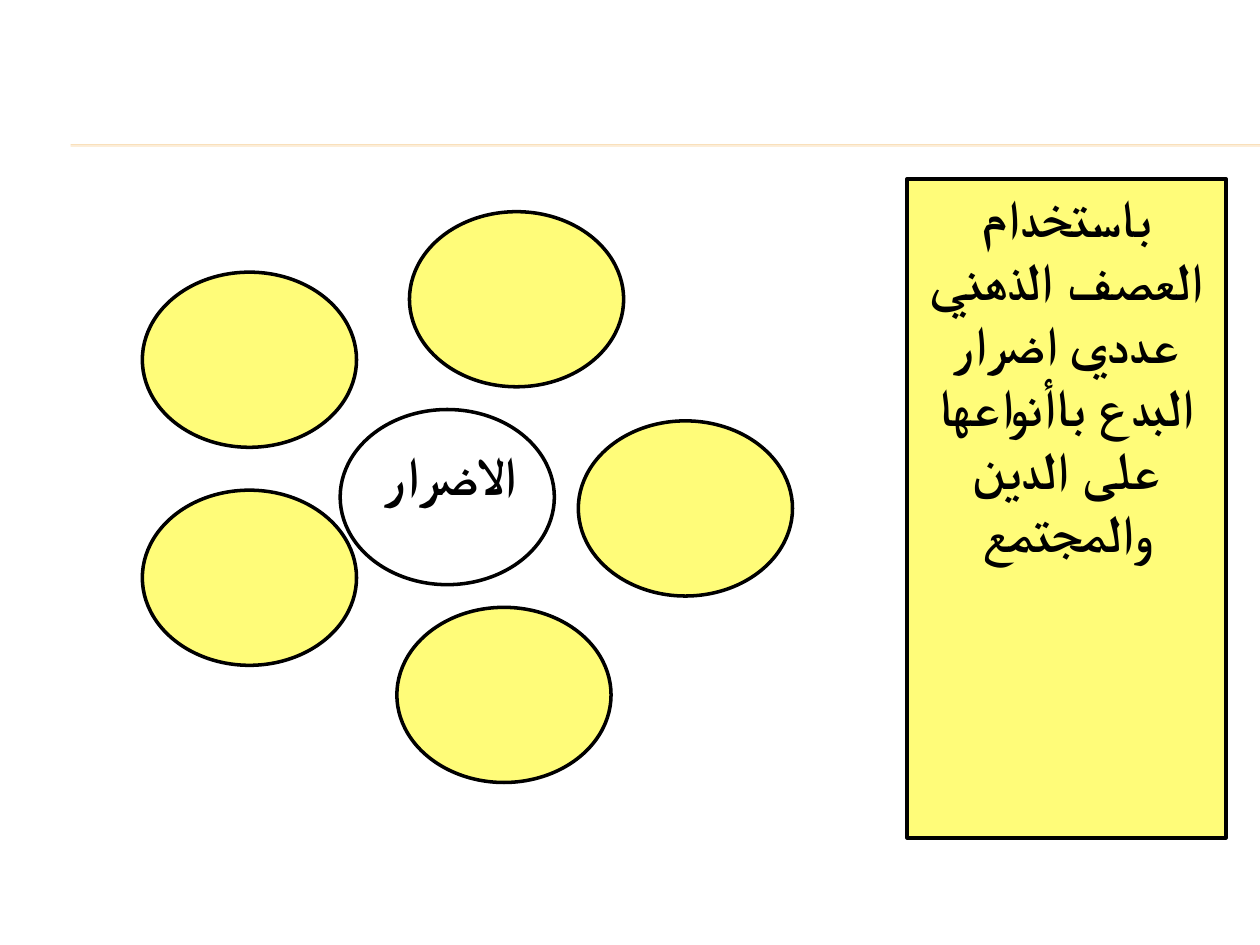
from lxml import etree
from pptx import Presentation
from pptx.dml.color import RGBColor
from pptx.enum.shapes import MSO_CONNECTOR, MSO_SHAPE
from pptx.enum.text import MSO_ANCHOR, PP_ALIGN
from pptx.oxml.ns import qn
from pptx.util import Inches, Pt

COLORS = {"yellow": "FFFC79", "white": "FFFFFF", "black": "000000", "rule": "F0A22E"}
FONT = "Roboto"
OVAL_W, OVAL_H = 1.7, 1.39
PETALS = [(3.25, 1.68), (3.15, 4.82), (1.13, 3.89), (1.13, 2.16), (4.59, 3.34)]


def rgb(name):
    """Return the named palette colour."""
    return RGBColor.from_string(COLORS[name])


def add_rule(s, left, top, right, bottom):
    """Draw one thin half-transparent header line."""
    line = s.shapes.add_connector(
        MSO_CONNECTOR.STRAIGHT, Inches(left), Inches(top), Inches(right), Inches(bottom))
    line.line.width = Pt(0.25)
    line.line.color.rgb = rgb("rule")
    color = line.line._ln.find(".//" + qn("a:srgbClr"))
    etree.SubElement(color, qn("a:alpha"), val="50000")
    etree.SubElement(line._element.spPr, qn("a:effectLst"))


def add_outlined(s, kind, box, fill):
    """Add a filled shape with a black outline."""
    sp = s.shapes.add_shape(kind, *map(Inches, box))
    sp.shadow.inherit = False
    sp.fill.solid()
    sp.fill.fore_color.rgb = rgb(fill)
    sp.line.color.rgb = rgb("black")
    sp.line.width = Pt(2)
    return sp


def write_arabic(sp, text, size, align):
    """Write bold right-to-left text at the top of a shape."""
    tf = sp.text_frame
    frame = {"word_wrap": True, "vertical_anchor": MSO_ANCHOR.TOP}
    frame.update({f"margin_{side}": Inches(0.05) for side in ("left", "top", "right", "bottom")})
    for name, value in frame.items():
        setattr(tf, name, value)
    p = tf.paragraphs[0]
    p.alignment = align
    p._p.get_or_add_pPr().set("rtl", "1")
    r = p.add_run()
    r.text = text
    for name, value in {"name": FONT, "size": Pt(size), "bold": True}.items():
        setattr(r.font, name, value)
    r.font.color.rgb = rgb("black")
    etree.SubElement(r._r.get_or_add_rPr(), qn("a:cs"), typeface=FONT)


def add_header(s, left, right):
    """Draw the stacked header lines."""
    for y in (1.15, 1.15, 1.16):
        add_rule(s, left, y, right, y)


def add_task(s, box):
    """Add the tall panel with the task."""
    sp = add_outlined(s, MSO_SHAPE.RECTANGLE, box, "yellow")
    write_arabic(sp, "باستخدام العصف الذهني عددي اضرار البدع باأنواعها على الدين والمجتمع",
                 30, PP_ALIGN.CENTER)


def add_flower(s, left, top):
    """Add the central oval and the empty ovals around it."""
    center = add_outlined(s, MSO_SHAPE.OVAL, (left, top, OVAL_W, OVAL_H), "white")
    write_arabic(center, "الاضرار", 31, PP_ALIGN.RIGHT)
    for x, y in PETALS:
        add_outlined(s, MSO_SHAPE.OVAL, (x, y, OVAL_W, OVAL_H), "yellow")


def main():
    """Build and save the slide."""
    prs = Presentation()
    prs.slide_width, prs.slide_height = Inches(10), Inches(7.5)
    s = prs.slides.add_slide(prs.slide_layouts[6])
    add_header(s, 0.56, 10)
    add_task(s, (7.2, 1.42, 2.53, 5.23))
    add_flower(s, 2.7, 3.25)
    prs.save("out.pptx")


if __name__ == "__main__":
    main()
